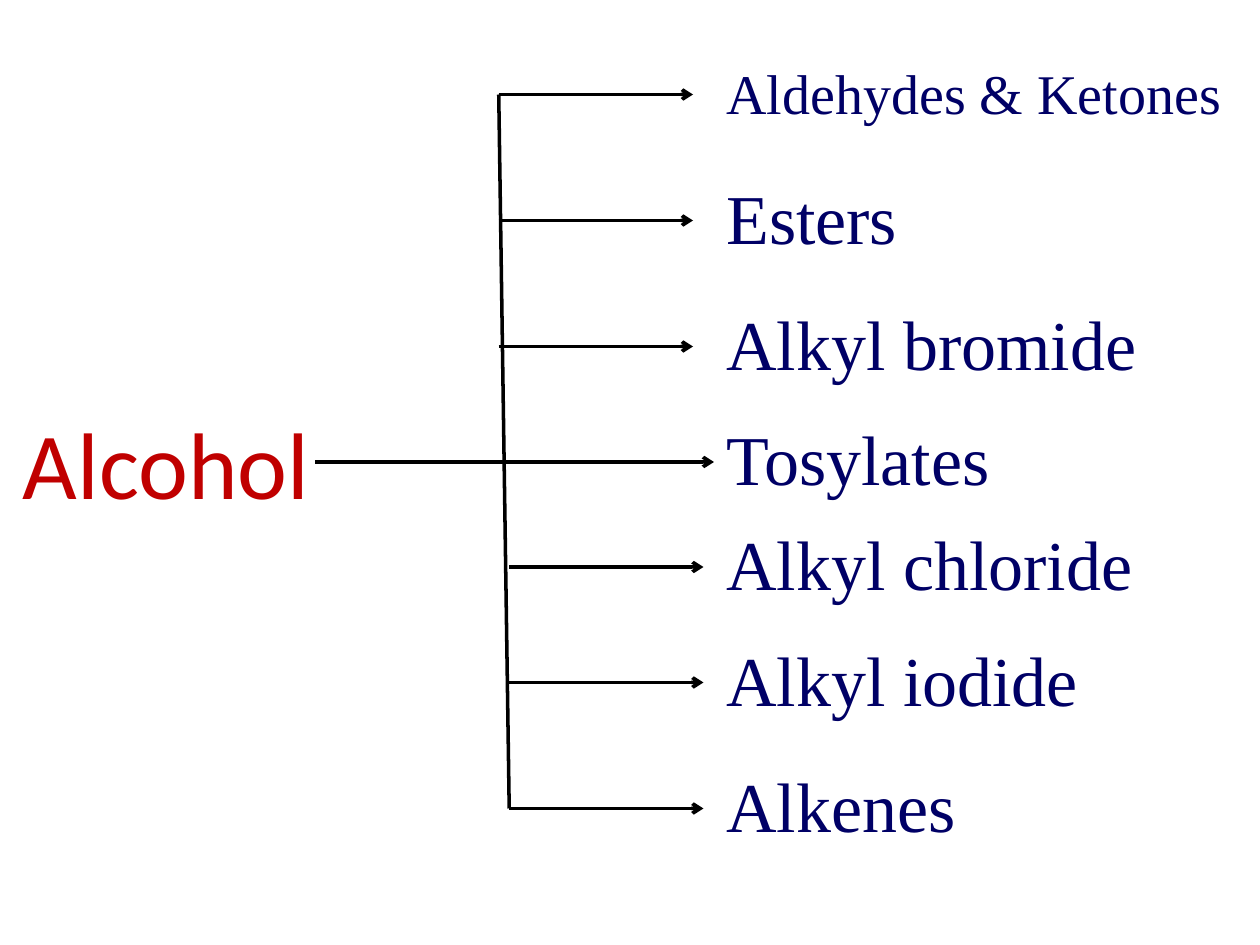
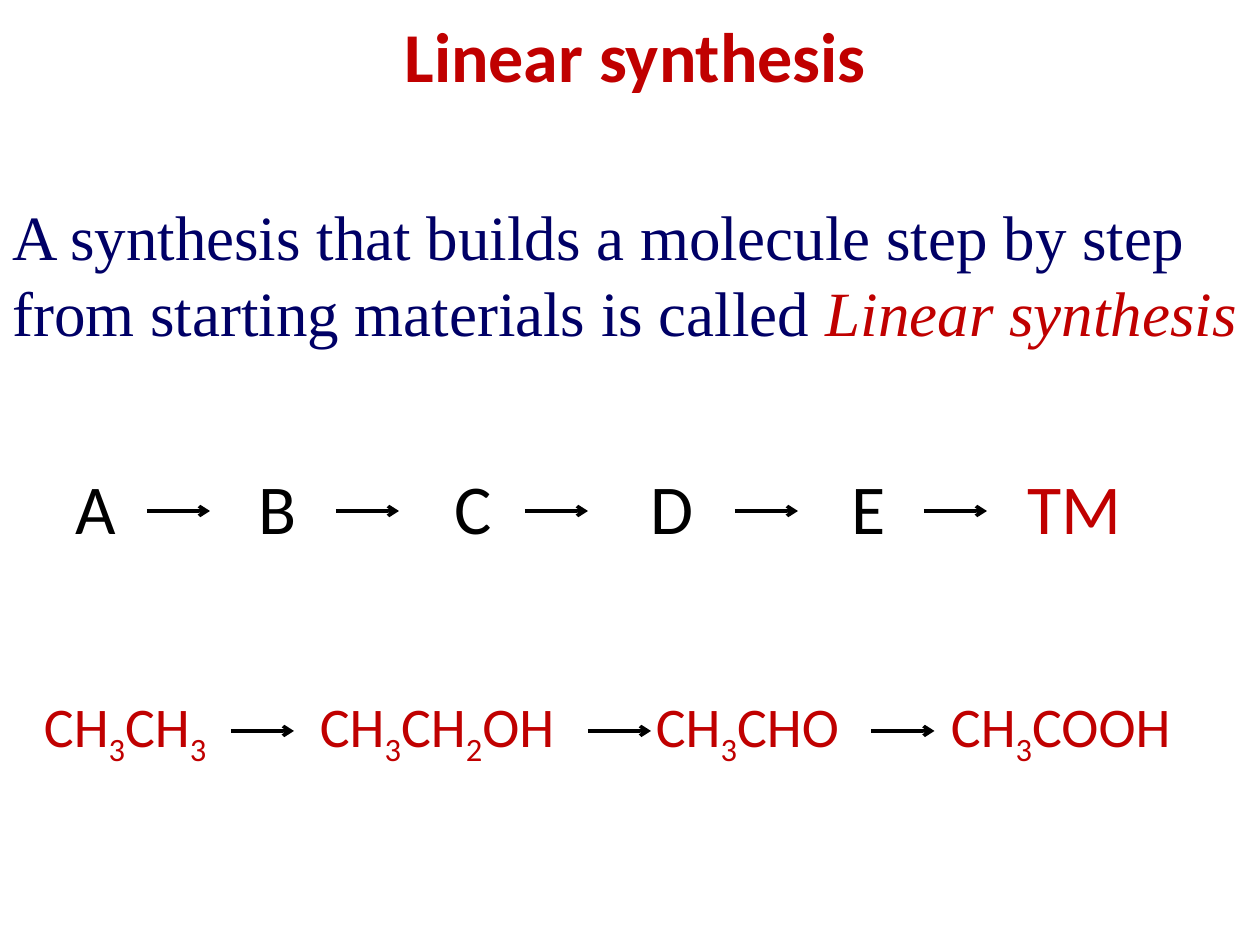
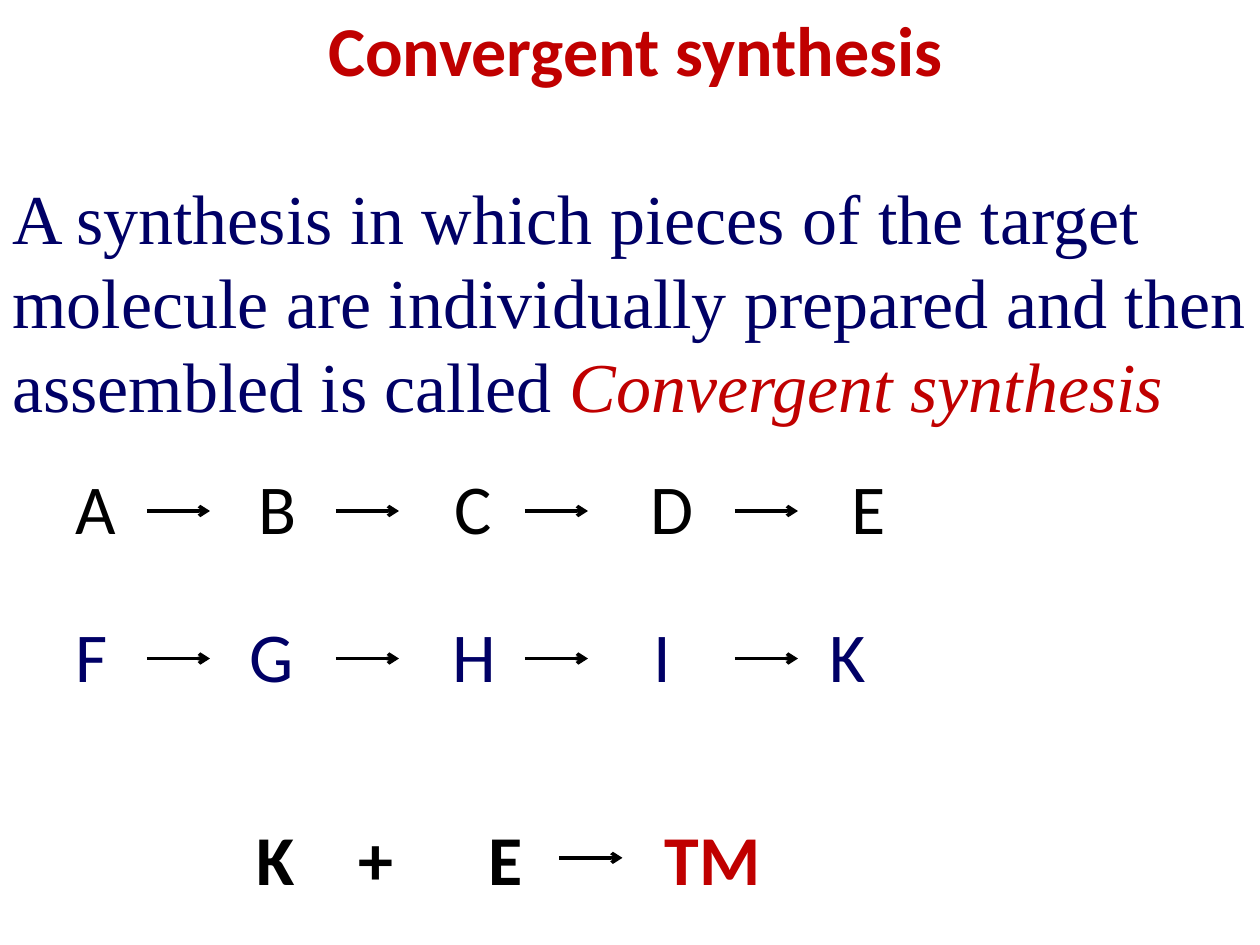
import itertools

import lxml.etree
import pptx
import pptx.dml.color
import pptx.enum.shapes
import pptx.enum.text
import pptx.oxml.ns
import pptx.util

Pt = pptx.util.Pt
RED = pptx.dml.color.RGBColor(0xC0, 0x00, 0x00)
NAVY = pptx.dml.color.RGBColor(0x00, 0x00, 0x66)
BLACK = pptx.dml.color.RGBColor(0x00, 0x00, 0x00)
SANS, SERIF = "Calibri", "Times New Roman"
SLIDE_WIDTH, SLIDE_HEIGHT = 720, 540
TITLE_ONLY, BLANK = 5, 6
STEP_ARROW_LENGTH = 36


def text_height(size, lines=1):
    """Height of a box around text, with its insets."""
    return round(lines * size * 1.2 + 7.2, 1)


# Shared text and line helpers
def add_element(parent, tag, **attributes):
    return lxml.etree.SubElement(parent, pptx.oxml.ns.qn(tag), attributes)


def add_run(paragraph, text, color, subscript=False, **formats):
    run = paragraph.add_run()
    run.text = text
    for name, value in formats.items():
        setattr(run.font, name, value)
    run.font.color.rgb = color
    if subscript:
        run._r.get_or_add_rPr().set("baseline", "-25000")


def add_text_box(slide, left, top, width, height, wrap=True):
    shape = slide.shapes.add_textbox(Pt(left), Pt(top), Pt(width), Pt(height))
    shape.text_frame.word_wrap = wrap
    return shape.text_frame.paragraphs[0]


def add_line(slide, start, end, arrow=True):
    connector = slide.shapes.add_connector(
        pptx.enum.shapes.MSO_CONNECTOR.STRAIGHT, *map(Pt, start + end))
    connector.line.color.rgb = BLACK
    connector.line.width = Pt(2)
    properties = connector._element.spPr
    if arrow:
        add_element(properties.find(pptx.oxml.ns.qn("a:ln")), "a:tailEnd", type="arrow")
    add_element(properties, "a:effectLst")


def add_tab_stops(paragraph, stops):
    tab_list = add_element(paragraph._p.get_or_add_pPr(), "a:tabLst")
    for stop in stops:
        add_element(tab_list, "a:tab", pos=str(int(Pt(stop))), algn="l")


# Slide 1: alcohol and the products it leads to
def build_product_tree(slide, left, top):
    paragraph = add_text_box(slide, left, top + 174, 180, text_height(54), wrap=False)
    add_run(paragraph, "Alcohol", RED, size=Pt(54), name=SANS)

    upper, root, lower = (279, 390), (174, 402), (285, 396)
    products = [
        ("Aldehydes & Ketones", 32, 300, 0, upper),
        ("Esters", 40, 113, 72, upper),
        ("Alkyl bromide", 40, 251, 144, upper),
        ("Tosylates", 40, 166, 210, root),
        ("Alkyl chloride", 40, 249, 270, lower),
        ("Alkyl iodide", 40, 217, 336, lower),
        ("Alkenes", 40, 147, 408, lower),
    ]
    add_line(slide, (left + upper[0], top), (left + lower[0], top + 408), arrow=False)
    for name, size, width, offset, (start, end) in products:
        y = top + offset
        add_line(slide, (left + start, y), (left + end, y))
        paragraph = add_text_box(slide, left + 402, y - 0.75 * size, width,
                                 text_height(size), wrap=False)
        add_run(paragraph, name, NAVY, size=Pt(size), name=SERIF)


# Title and definition
def build_title(slide, text, top):
    title = slide.shapes.title
    box = {"left": 6, "top": top, "width": SLIDE_WIDTH - 6, "height": text_height(40)}
    for name, value in box.items():
        setattr(title, name, Pt(value))
    frame_formats = {
        "word_wrap": True,
        "auto_size": pptx.enum.text.MSO_AUTO_SIZE.NONE,
        "vertical_anchor": pptx.enum.text.MSO_ANCHOR.TOP,
    }
    for name, value in frame_formats.items():
        setattr(title.text_frame, name, value)
    paragraph = title.text_frame.paragraphs[0]
    paragraph.alignment = pptx.enum.text.PP_ALIGN.CENTER
    add_run(paragraph, text, RED, size=Pt(40), name=SANS, bold=True)


def build_definition(slide, top, size, lines, text, term):
    paragraph = add_text_box(slide, 0, top, SLIDE_WIDTH, text_height(size, lines))
    formats = {"size": Pt(size), "name": SERIF}
    add_run(paragraph, text, NAVY, **formats)
    add_run(paragraph, term, RED, italic=True, **formats)


# A row of compounds on tab stops, with arrows in the gaps
def build_reaction(slide, left, top, width, compounds, stops, arrows,
                   arrow_y=30, size=40, color=BLACK, bold=None):
    paragraph = add_text_box(slide, left, top, width, text_height(size))
    add_tab_stops(paragraph, stops)
    formats = {"size": Pt(size), "name": SANS, "bold": bold}
    for index, compound in enumerate(compounds):
        if index:
            add_run(paragraph, "\t", color, **formats)
        for is_digit, letters in itertools.groupby(compound, str.isdigit):
            add_run(paragraph, "".join(letters), RED if compound == "TM" else color,
                    subscript=is_digit, **formats)
    for offset in arrows:
        start = left + offset
        add_line(slide, (start, top + arrow_y), (start + STEP_ARROW_LENGTH, top + arrow_y))


LETTER_STOPS = [104.5, 216.7, 328.4, 443.4, 544.3]
LETTER_ARROWS = [48, 156, 264, 384, 492]


def build_linear_synthesis(slide):
    build_title(slide, "Linear synthesis", 3.6)
    build_definition(slide, 109.5, 36, 2,
                     "A synthesis that builds a molecule step by step from "
                     "starting materials is called ", "Linear synthesis")
    build_reaction(slide, 36, 262, 616, ["A", "B", "C", "D", "E", "TM"],
                   LETTER_STOPS, LETTER_ARROWS)
    build_reaction(slide, 18, 391.7, 672, ["CH3CH3", "CH3CH2OH", "CH3CHO", "CH3COOH"],
                   [157.7, 349.7, 518.3], [114, 318, 480],
                   arrow_y=26, size=32, color=RED)


def build_convergent_synthesis(slide):
    build_title(slide, "Convergent synthesis", 0)
    build_definition(slide, 96, 40, 3,
                     "A synthesis in which pieces of the target molecule are "
                     "individually prepared and then assembled is called ",
                     "Convergent synthesis")
    build_reaction(slide, 36, 262, 480, "ABCDE", LETTER_STOPS[:4], LETTER_ARROWS[:4])
    build_reaction(slide, 36, 346.3, 470, "FGHIK", [99.7, 215.3, 330.6, 431.1],
                   LETTER_ARROWS[:4], color=NAVY)
    build_reaction(slide, 139.7, 462.2, 353, ["K", "+", "E", "TM"],
                   [58, 132.2, 233.1], [180], arrow_y=28, bold=True)


def main():
    presentation = pptx.Presentation()
    presentation.slide_width = Pt(SLIDE_WIDTH)
    presentation.slide_height = Pt(SLIDE_HEIGHT)
    layouts = presentation.slide_layouts
    build_product_tree(presentation.slides.add_slide(layouts[BLANK]), 6, 54)
    build_linear_synthesis(presentation.slides.add_slide(layouts[TITLE_ONLY]))
    build_convergent_synthesis(presentation.slides.add_slide(layouts[TITLE_ONLY]))
    presentation.save("out.pptx")


if __name__ == "__main__":
    main()
